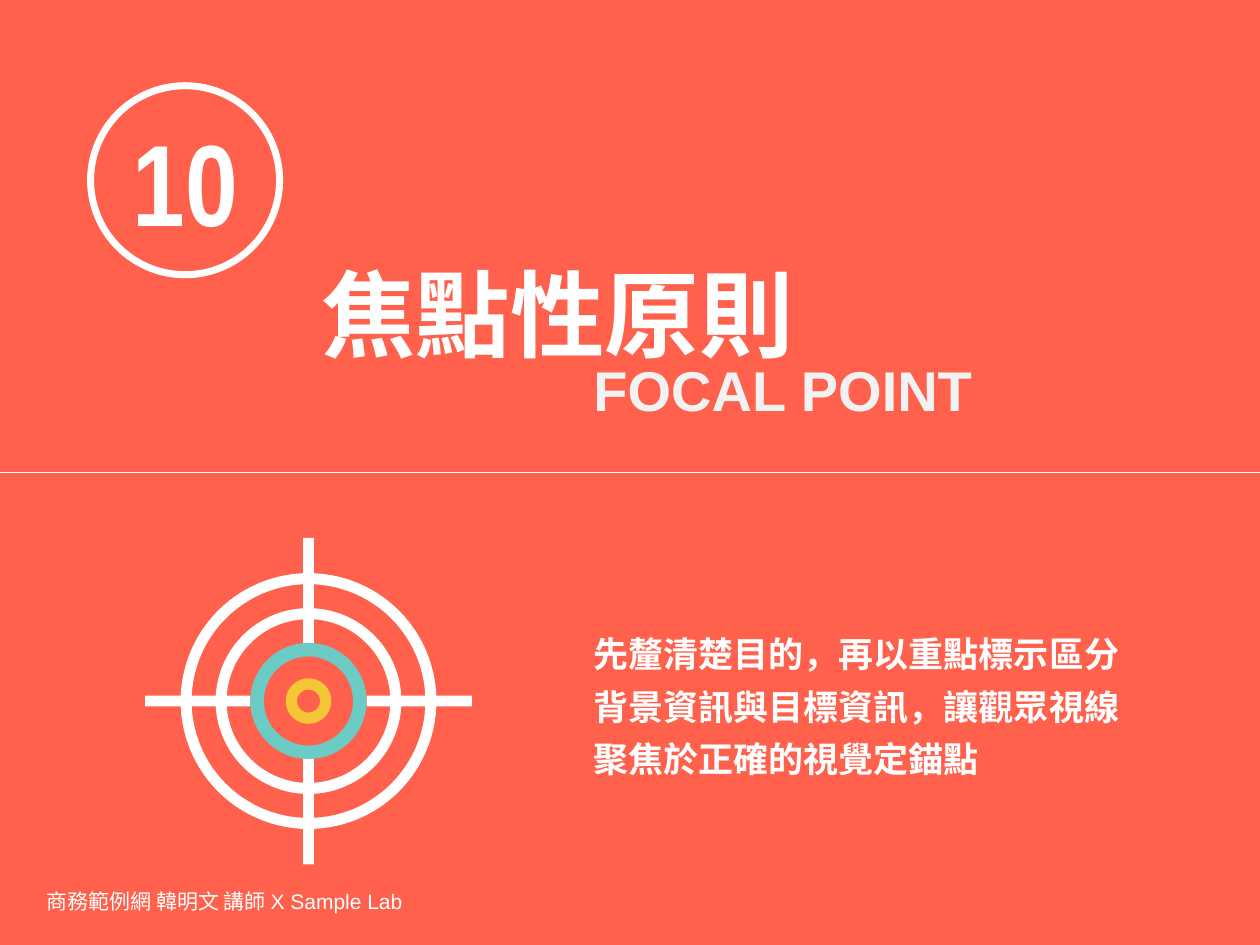
from math import asin, cos, pi, sin

from lxml.etree import SubElement
from pptx import Presentation
from pptx.dml.color import RGBColor
from pptx.enum.shapes import MSO_CONNECTOR, MSO_SHAPE
from pptx.enum.text import MSO_ANCHOR, MSO_AUTO_SIZE, PP_ALIGN
from pptx.oxml.ns import qn
from pptx.util import Pt

COLORS = {
    "coral": "FF614C",
    "white": "FFFFFF",
    "mist": "F2F2F2",
    "teal": "6BCBC5",
    "yellow": "F5C636",
}
CENTER = (176.3, 400.6)
HALF_BAR = 3.1
ARC_STEPS = 24


def arc(radius, quadrant):
    inset = asin(HALF_BAR / radius)
    start = quadrant * pi / 2 + inset
    step = (pi / 2 - 2 * inset) / ARC_STEPS
    angles = [start + step * index for index in range(ARC_STEPS + 1)]
    return [(radius * cos(angle), radius * sin(angle)) for angle in angles]


def cross_outline(radius, tip):
    points = []
    for quadrant in range(4):
        points += arc(radius, quadrant)
        angle = (quadrant + 1) * pi / 2
        for side in (-HALF_BAR, HALF_BAR):
            points.append((tip * cos(angle) - side * sin(angle),
                           tip * sin(angle) + side * cos(angle)))
    return points


def ring_gap(outer, inner, quadrant):
    return arc(outer, quadrant) + arc(inner, quadrant)[::-1]


class SlideBuilder:
    def __init__(self, deck, font="Arial"):
        self.font = font
        self.page = deck.slides.add_slide(deck.slide_layouts[5])
        background = self.page.background.fill
        background.solid()
        background.fore_color.rgb = self.color("coral")

    def color(self, name):
        return RGBColor.from_string(COLORS[name])

    def set_text(self, box, words, size, color="white", bold=True, font=None,
                 anchor=MSO_ANCHOR.TOP, align=PP_ALIGN.LEFT, spacing=None):
        frame = box.text_frame
        frame.vertical_anchor = anchor
        frame.text = words
        para = frame.paragraphs[0]
        para.alignment = align
        if spacing:
            para.line_spacing = Pt(spacing)
        para.font.name = font or self.font
        para.font.size = Pt(size)
        para.font.bold = bold
        para.font.color.rgb = self.color(color)

    def title(self, words, left, top, width, height, size):
        box = self.page.shapes.title
        box.left, box.top = Pt(left), Pt(top)
        box.width, box.height = Pt(width), Pt(height)
        box.text_frame.auto_size = MSO_AUTO_SIZE.SHAPE_TO_FIT_TEXT
        self.set_text(box, words, size)

    def text(self, words, left, top, width, height, size, grow=True, **style):
        box = self.page.shapes.add_textbox(Pt(left), Pt(top), Pt(width), Pt(height))
        box.text_frame.word_wrap = True
        if grow:
            box.text_frame.auto_size = MSO_AUTO_SIZE.SHAPE_TO_FIT_TEXT
        self.set_text(box, words, size, **style)

    def paint(self, shape, color):
        shape.shadow.inherit = False
        shape.fill.solid()
        shape.fill.fore_color.rgb = self.color(color)
        shape.line.fill.background()

    def badge(self, words, left, top, diameter, size, width):
        circle = self.page.shapes.add_shape(
            MSO_SHAPE.OVAL, Pt(left), Pt(top), Pt(diameter), Pt(diameter))
        circle.shadow.inherit = False
        circle.fill.background()
        circle.line.color.rgb = self.color("white")
        circle.line.width = Pt(width)
        circle.text_frame.word_wrap = False
        self.set_text(circle, words, size, font="Arial Narrow",
                      anchor=MSO_ANCHOR.MIDDLE, align=PP_ALIGN.CENTER)

    def rule(self, left, right, top, width):
        line = self.page.shapes.add_connector(
            MSO_CONNECTOR.STRAIGHT, Pt(left), Pt(top), Pt(right), Pt(top))
        line.line.color.rgb = self.color("white")
        line.line.width = Pt(width)
        SubElement(line._element.spPr, qn("a:effectLst"))

    def ring(self, center, radius, thickness, color):
        shape = self.page.shapes.add_shape(
            MSO_SHAPE.DONUT, Pt(center[0] - radius), Pt(center[1] - radius),
            Pt(2 * radius), Pt(2 * radius))
        shape.adjustments[0] = thickness / (2 * radius)
        self.paint(shape, color)

    def outline(self, center, contours, color):
        placed = [[(Pt(center[0] + x), Pt(center[1] + y)) for x, y in contour]
                  for contour in contours]
        builder = self.page.shapes.build_freeform(*placed[0][0])
        builder.add_line_segments(placed[0][1:], close=True)
        for contour in placed[1:]:
            builder.move_to(*contour[0])
            builder.add_line_segments(contour[1:], close=True)
        self.paint(builder.convert_to_shape(), color)


def main():
    deck = Presentation()
    deck.slide_width, deck.slide_height = Pt(720), Pt(540)
    slide = SlideBuilder(deck)

    slide.text("商務範例網 韓明文 講師 X Sample Lab", 19.5, 500.4, 340.5, 28.8, 12,
               grow=False, bold=False, anchor=MSO_ANCHOR.MIDDLE)
    slide.badge("10", 51.8, 49, 108, 66, 4)
    slide.title("焦點性原則", 176.4, 142.6, 296.6, 72.7, 54)
    slide.rule(0, 720, 270, 1)
    slide.text("FOCAL POINT", 332, 199.4, 241.2, 46.1, 32, color="mist")

    slide.ring(CENTER, 13, 6.4, "yellow")
    crosshair = [cross_outline(73.1, 93.3), cross_outline(46.8, 33.2)]
    crosshair += [ring_gap(66.8, 53.1, quadrant) for quadrant in range(4)]
    slide.outline(CENTER, crosshair, "white")
    slide.ring(CENTER, 33.2, 7.7, "teal")

    slide.text("先釐清楚目的，再以重點標示區分背景資訊與目標資訊，讓觀眾視線聚焦於正確的視覺定錨點",
               332, 352, 326.2, 98, 20, spacing=30)
    deck.save("out.pptx")


if __name__ == "__main__":
    main()
